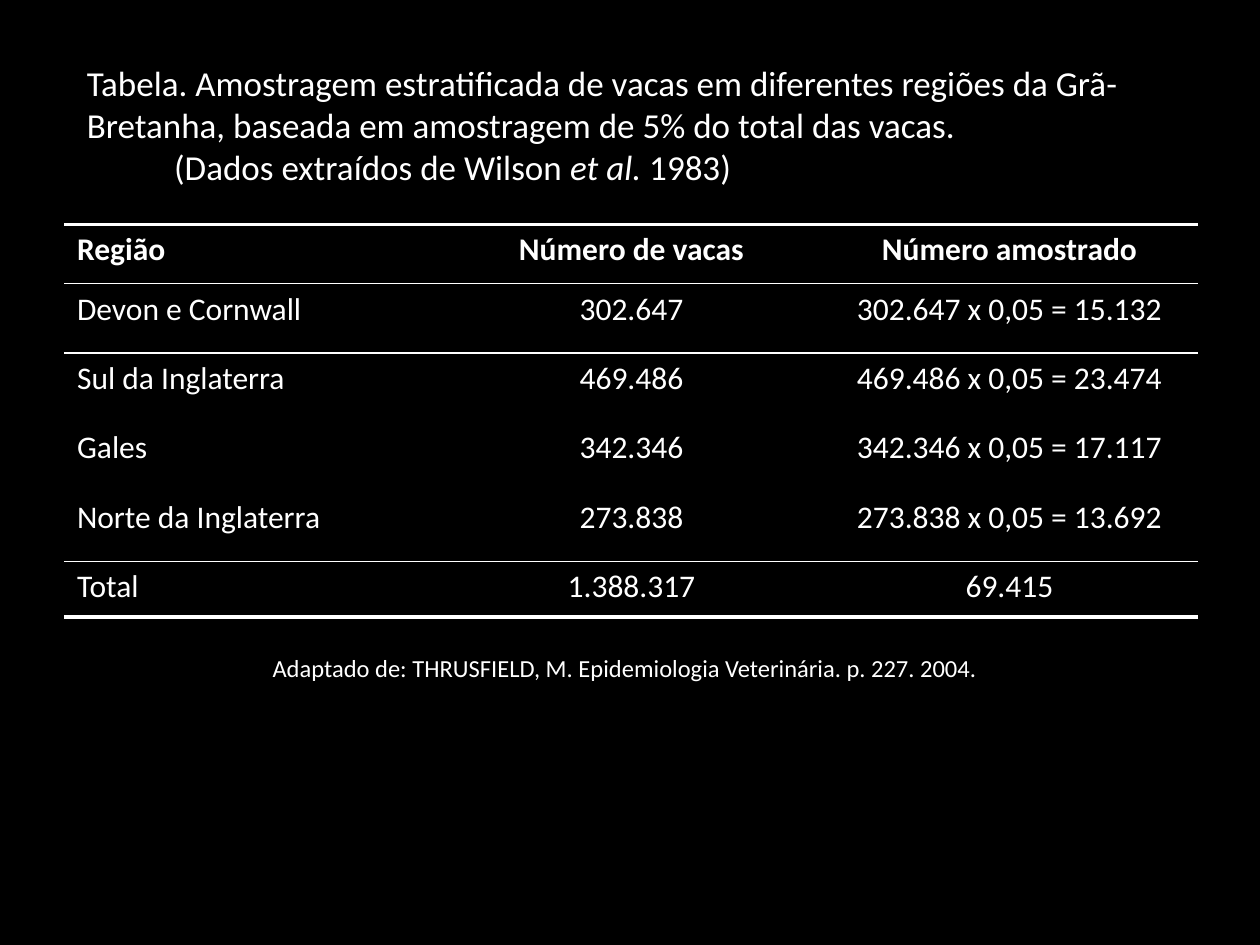
from dataclasses import dataclass

from lxml import etree
from pptx import Presentation
from pptx.dml.color import RGBColor
from pptx.enum.text import MSO_AUTO_SIZE, PP_ALIGN
from pptx.oxml.ns import qn
from pptx.util import Cm, Pt

LEFT, CENTER = PP_ALIGN.LEFT, PP_ALIGN.CENTER
GROW = MSO_AUTO_SIZE.SHAPE_TO_FIT_TEXT
PLAIN_TABLE = "{2D5ABB26-0587-4C30-8999-92F81FD0307C}"


@dataclass(frozen=True)
class Theme:
    font: str = "Calibri"
    background: RGBColor = RGBColor(0, 0, 0)
    ink: RGBColor = RGBColor(255, 255, 255)
    title: int = 20
    body: int = 18
    source: int = 14
    thin: float = 1
    thick: float = 2.25


def apply_format(target, values):
    for name, value in values.items():
        setattr(target, name, value)


class SlideBuilder:
    def __init__(self, slide, theme):
        self.slide = slide
        self.theme = theme
        fill = slide.background.fill
        fill.solid()
        fill.fore_color.rgb = theme.background

    def add_runs(self, paragraph, runs, size, align=LEFT):
        paragraph.alignment = align
        for text, style in runs:
            run = paragraph.add_run()
            run.text = text
            apply_format(run.font, {"name": self.theme.font, "size": Pt(size), **style})
            run.font.color.rgb = self.theme.ink

    def text(self, box, paragraphs, size, align=LEFT):
        frame = self.slide.shapes.add_textbox(*map(Cm, box)).text_frame
        apply_format(frame, {"word_wrap": True, "auto_size": GROW})
        for index, (indent, runs) in enumerate(paragraphs):
            paragraph = frame.add_paragraph() if index else frame.paragraphs[0]
            if indent:
                paragraph._p.get_or_add_pPr().set("indent", str(Cm(indent)))
            self.add_runs(paragraph, runs, size, align)

    def border(self, cell, side, width):
        line = etree.SubElement(cell._tc.get_or_add_tcPr(), qn(f"a:{side}"), w=str(Pt(width)))
        fill = etree.SubElement(line, qn("a:solidFill"))
        etree.SubElement(fill, qn("a:srgbClr"), val=str(self.theme.ink))

    def table(self, left, top, width, heights, rows, rules):
        columns = len(rows[0])
        table = self.slide.shapes.add_table(
            len(rows), columns, Cm(left), Cm(top), Cm(width), Cm(sum(heights))
        ).table
        apply_format(table, {"first_row": False, "horz_banding": False})
        table._tbl.tblPr.find(qn("a:tableStyleId")).text = PLAIN_TABLE
        for row_index, (height, values) in enumerate(zip(heights, rows)):
            table.rows[row_index].height = Cm(height)
            for column_index, value in enumerate(values):
                cell = table.cell(row_index, column_index)
                for side, edge in (("lnT", row_index), ("lnB", row_index + 1)):
                    if edge in rules:
                        self.border(cell, side, rules[edge])
                cell.fill.background()
                style = {"bold": row_index == 0}
                align = CENTER if column_index else LEFT
                self.add_runs(cell.text_frame.paragraphs[0], [(value, style)], self.theme.body, align)


def main():
    theme = Theme()
    presentation = Presentation()
    apply_format(presentation, {"slide_width": Cm(25.4), "slide_height": Cm(19.05)})
    builder = SlideBuilder(presentation.slides.add_slide(presentation.slide_layouts[6]), theme)

    title = (
        "Tabela. Amostragem estratificada de vacas em diferentes regiões da "
        "Grã-Bretanha, baseada em amostragem de 5% do total das vacas."
    )
    citation = [
        ("(Dados extraídos de Wilson ", {}),
        ("et al.", {"italic": True}),
        (" 1983)", {}),
    ]
    builder.text((1.5, 1.12, 22.2, 2.79), [(0, [(title, {})]), (1.76, citation)], theme.title)

    regions = [
        ("Devon e Cornwall", "302.647", "15.132"),
        ("Sul da Inglaterra", "469.486", "23.474"),
        ("Gales", "342.346", "17.117"),
        ("Norte da Inglaterra", "273.838", "13.692"),
    ]
    rows = [
        ("Região", "Número de vacas", "Número amostrado"),
        *((region, cows, f"{cows} x 0,05 = {sample}") for region, cows, sample in regions),
        ("Total", "1.388.317", "69.415"),
    ]
    heights = [1.2, *[1.4] * len(regions), 1.12]
    rules = {0: theme.thick, 1: theme.thin, len(rows) - 1: theme.thin, len(rows): theme.thick}
    builder.table(1.3, 4.52, 22.86, heights, rows, rules)

    source = "Adaptado de: THRUSFIELD, M. Epidemiologia Veterinária. p. 227. 2004."
    builder.text((1.5, 13.03, 22.2, 0.84), [(0, [(source, {})])], theme.source, CENTER)
    presentation.save("out.pptx")


if __name__ == "__main__":
    main()
